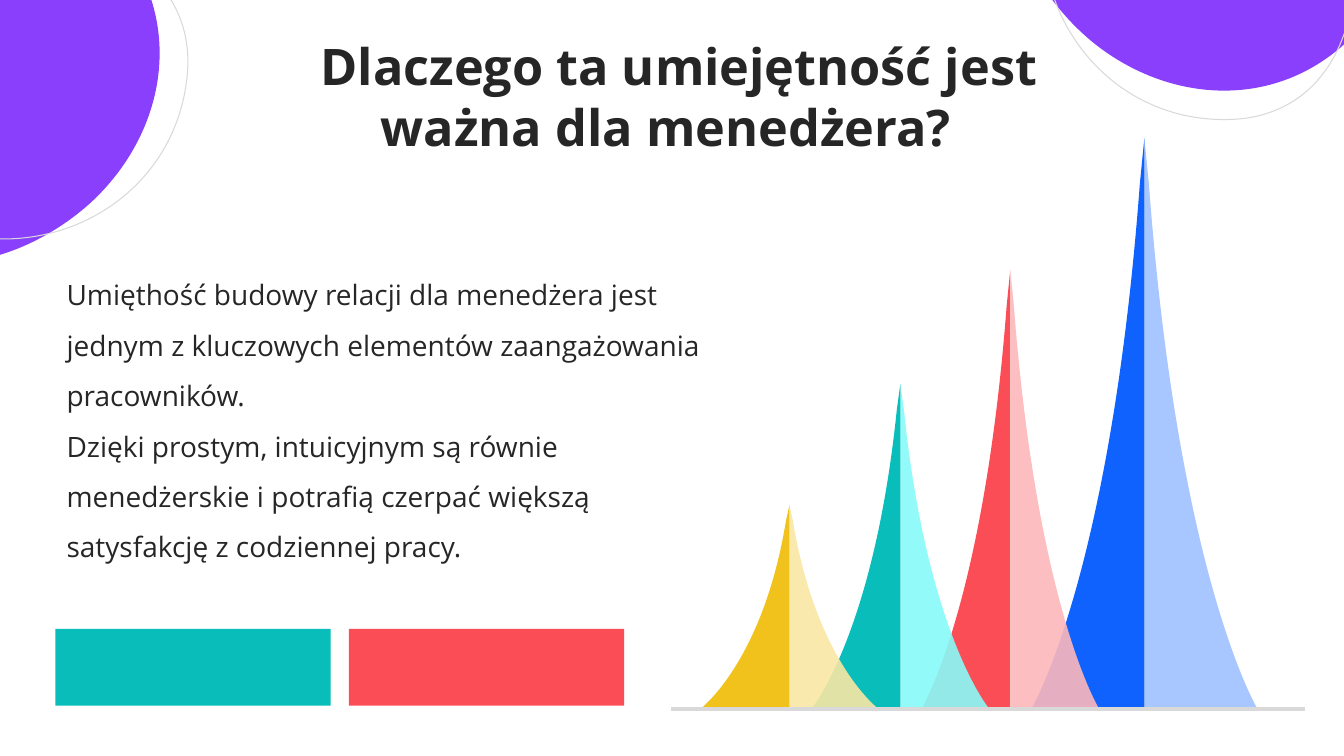
from math import cos, radians, sin

from lxml import etree
from pptx import Presentation
from pptx.dml.color import RGBColor
from pptx.enum.shapes import MSO_CONNECTOR, MSO_SHAPE
from pptx.enum.text import MSO_ANCHOR, MSO_AUTO_SIZE, PP_ALIGN
from pptx.oxml.ns import qn
from pptx.util import Inches, Pt

STRAIGHT = MSO_CONNECTOR.STRAIGHT
RECTANGLE = MSO_SHAPE.RECTANGLE
TOP = MSO_ANCHOR.TOP
GROW = MSO_AUTO_SIZE.SHAPE_TO_FIT_TEXT
CENTER, LEFT = PP_ALIGN.CENTER, PP_ALIGN.LEFT

FONT = "Open Sans"
INK = RGBColor(0x26, 0x26, 0x26)
GREY = RGBColor(0xD9, 0xD9, 0xD9)
PURPLE = RGBColor(0x8A, 0x3F, 0xFC)
BLUE, PALE_BLUE = RGBColor(0x0F, 0x62, 0xFE), RGBColor(0x9F, 0xC0, 0xFF)
RED, PALE_RED = RGBColor(0xFA, 0x4D, 0x56), RGBColor(0xFD, 0xB8, 0xBB)
TEAL, PALE_TEAL = RGBColor(0x08, 0xBD, 0xBA), RGBColor(0x87, 0xFA, 0xF8)
YELLOW, PALE_YELLOW = RGBColor(0xF1, 0xC2, 0x1B), RGBColor(0xF9, 0xE7, 0xA4)

deck = Presentation()
deck.slide_width, deck.slide_height = Inches(13.33), Inches(7.5)
page = deck.slides.add_slide(deck.slide_layouts[1])


def draw_curves(left, top, width, height, points, fill=None, line=None):
    """Draw a closed chain of cubic curves; points are inches from the frame's corner."""
    right, bottom = Inches(left + width), Inches(top + height)
    builder = page.shapes.build_freeform(Inches(left), Inches(top))
    builder.add_line_segments(
        [(right, Inches(top)), (right, bottom), (Inches(left), bottom)], close=True)
    outline = builder.convert_to_shape()

    # Replace the frame's straight sides by curves
    route = outline._element.find(".//" + qn("a:path"))
    for side in list(route):
        route.remove(side)
    step = etree.SubElement(route, qn("a:moveTo"))
    for index, (x, y) in enumerate(points):
        if index % 3 == 1:
            step = etree.SubElement(route, qn("a:cubicBezTo"))
        etree.SubElement(step, qn("a:pt"), x=str(Inches(x)), y=str(Inches(y)))
    etree.SubElement(route, qn("a:close"))

    outline.shadow.inherit = False
    if fill is None:
        outline.fill.background()
    else:
        outline.fill.solid()
        outline.fill.fore_color.rgb = fill
    if line is None:
        outline.line.fill.background()
    else:
        outline.line.color.rgb = line
        outline.line.width = Pt(0.75)
    return outline


# Peaks: apex x, apex y, half width, dark left half, pale right half
BASE = 7.03
peaks = [
    (11.35, 1.37, 1.12, BLUE, PALE_BLUE),
    (10.02, 2.68, 0.88, RED, PALE_RED),
    (8.93, 3.81, 0.88, TEAL, PALE_TEAL),
    (7.83, 5.01, 0.88, YELLOW, PALE_YELLOW),
]
# Right half from apex to foot and back to the axis, as shares of width and height
SLOPE = [(0, 0), (0, 0), (0.02, 0.04), (0.04, 0.08),
         (0.3, 0.77), (1, 1), (1, 1), (0, 1), (0, 1), (0, 1)]
for apex_x, apex_y, width, dark, pale in peaks:
    height = BASE - apex_y
    right_half = [(width * across, height * down) for across, down in SLOPE]
    left_half = [(width - x, y) for x, y in right_half]
    half = draw_curves(apex_x, apex_y, width, height, right_half, pale)
    tint = half._element.spPr.find(qn("a:solidFill")).find(qn("a:srgbClr"))
    etree.SubElement(tint, qn("a:alpha"), val="90000")
    draw_curves(apex_x - width, apex_y, width, height, left_half, dark)

# Ground line
ground = page.shapes.add_connector(
    STRAIGHT, Inches(6.66), Inches(BASE), Inches(12.94), Inches(BASE))
ground.line.color.rgb = GREY
ground.line.width = Pt(3)
etree.SubElement(ground._element.spPr, qn("a:effectLst"))

# Title and body text
title, body = page.placeholders
texts = [
    (title, (2.94, 0.3, 7.46, 1.31), 36, True, CENTER, 1.0,
     [" Dlaczego ta umiejętność jest ważna dla menedżera? "]),
    (body, (0.56, 2.54, 6.72, 3.07), 20, False, LEFT, 1.5,
     ["Umięthość budowy relacji dla menedżera jest jednym z kluczowych elementów "
      "zaangażowania pracowników.",
      "Dzięki prostym, intuicyjnym są równie menedżerskie i potrafią czerpać większą "
      "satysfakcję z codziennej pracy."]),
]
for box, place, size, bold, alignment, spacing, lines in texts:
    box.left, box.top, box.width, box.height = map(Inches, place)
    frame = box.text_frame
    frame.word_wrap = True
    frame.auto_size = GROW
    frame.vertical_anchor = TOP
    frame.text = "\n".join(lines)
    for para in frame.paragraphs:
        properties = para._p.get_or_add_pPr()
        properties.set("marL", "0")
        properties.set("indent", "0")
        etree.SubElement(properties, qn("a:buNone"))
        para.alignment = alignment
        para.line_spacing = spacing
        para.space_before = Pt(0)
        para.font.name = FONT
        para.font.size = Pt(size)
        para.font.bold = bold
        para.font.color.rgb = INK

# Colour bars
for left, color in ((0.55, TEAL), (3.46, RED)):
    bar = page.shapes.add_shape(
        RECTANGLE, Inches(left), Inches(6.24), Inches(2.73), Inches(0.76))
    bar.shadow.inherit = False
    bar.fill.solid()
    bar.fill.fore_color.rgb = color
    bar.line.fill.background()

# Corner blobs and rings: outlines as they stand in the left corner, tilted
BLOB = [(-0.26, -1.17), (-1.15, -0.94), (-1.65, 0.57), (-1.68, 1.39),
        (-1.7, 1.76), (-1.57, 2.16), (-1.27, 2.37), (-0.58, 2.85), (0.32, 2.53),
        (0.89, 2.02), (1.56, 1.41), (1.82, 0.44), (1.33, -0.38),
        (1.08, -0.81), (0.34, -1.33), (-0.26, -1.17)]
RING = [(1.67, -0.04), (1.5, -0.29), (1.22, -0.48), (0.89, -0.58),
        (0.55, -0.67), (0.19, -0.68), (-0.16, -0.68), (-0.8, -0.66), (-1.78, -0.55),
        (-1.98, 0.2), (-2.21, 1.04), (-1.44, 1.93), (-0.72, 2.22),
        (0.43, 2.7), (1.76, 2), (1.86, 0.71), (1.88, 0.42), (1.81, 0.17), (1.67, -0.04)]
LEFT_TILT, RIGHT_TILT = 47, 129
ornaments = [
    (BLOB, 3.24, 3.82, (-1.78, -1.13), (10.28, -2.72), PURPLE, None),
    (RING, 3.61, 3.5, (-1.85, -1.08), (10.23, -2.46), None, GREY),
]
tilt = radians(LEFT_TILT)
for points, width, height, left_corner, right_corner, fill, line in ornaments:
    upright = []
    for x, y in points:
        across = x - left_corner[0] - width / 2
        down = y - left_corner[1] - height / 2
        upright.append((width / 2 + across * cos(tilt) + down * sin(tilt),
                        height / 2 - across * sin(tilt) + down * cos(tilt)))
    for corner, degrees in ((left_corner, LEFT_TILT), (right_corner, RIGHT_TILT)):
        ornament = draw_curves(*corner, width, height, upright, fill, line)
        ornament.rotation = degrees

deck.save("out.pptx")
